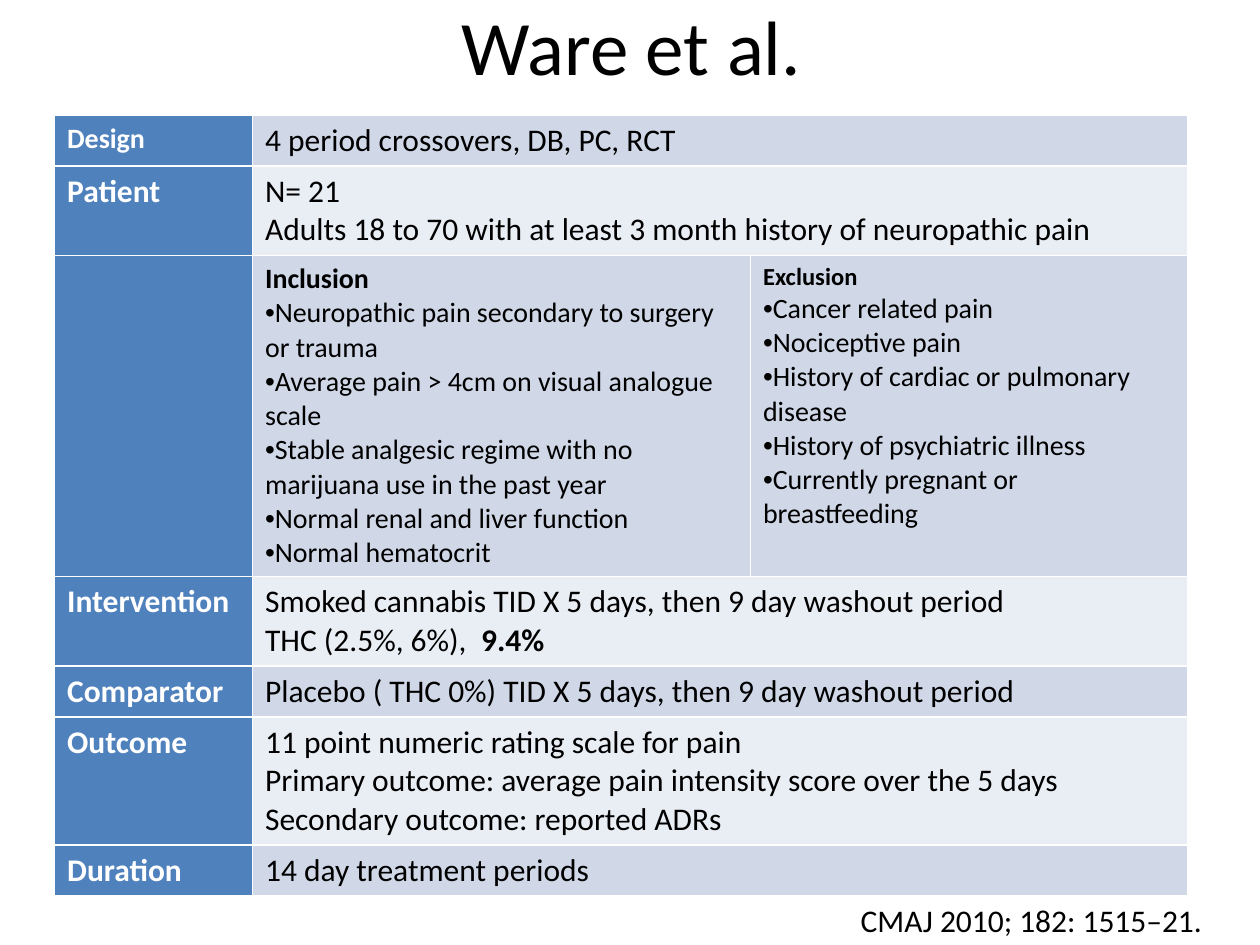
"""Build a one-slide summary table of a crossover trial."""
from dataclasses import dataclass

from lxml.etree import SubElement
from pptx import Presentation
from pptx.dml.color import RGBColor
from pptx.enum.text import MSO_ANCHOR, MSO_AUTO_SIZE, PP_ALIGN
from pptx.oxml.ns import qn
from pptx.util import Cm, Pt

BLACK = RGBColor(0x00, 0x00, 0x00)
WHITE = RGBColor(0xFF, 0xFF, 0xFF)
BLUE = RGBColor(0x4F, 0x81, 0xBD)
BANDS = (RGBColor(0xD0, 0xD8, 0xE8), RGBColor(0xE9, 0xED, 0xF4))


@dataclass
class Line:
    text: str
    size: int = 18
    bold: bool = False
    bullet: bool = False
    bold_ending: str = ""


def criteria(heading, heading_size, items):
    return [Line(heading, heading_size, bold=True)] + [
        Line(item, 16, bullet=True) for item in items
    ]


INCLUSION = criteria("Inclusion", 16, [
    "Neuropathic pain secondary to surgery or trauma",
    "Average pain > 4cm on visual analogue scale",
    "Stable analgesic regime with no marijuana use in the past year",
    "Normal renal and liver function",
    "Normal hematocrit",
])
EXCLUSION = criteria("Exclusion", 14, [
    "Cancer related pain",
    "Nociceptive pain",
    "History of cardiac or pulmonary disease",
    "History of psychiatric illness",
    "Currently pregnant or breastfeeding",
])
COLUMN_WIDTHS = (3.99, 10.04, 8.82)
ROWS = [
    (1, Line("Design", 16, True), [[Line("4 period crossovers, DB, PC, RCT")]]),
    (1.8, Line("Patient", bold=True), [[
        Line("N= 21"),
        Line("Adults 18 to 70 with at least 3 month history of neuropathic pain"),
    ]]),
    (6.44, None, [INCLUSION, EXCLUSION]),
    (1.8, Line("Intervention", bold=True), [[
        Line("Smoked cannabis TID X 5 days, then 9 day washout period"),
        Line("THC (2.5%, 6%),  ", bold_ending="9.4%"),
    ]]),
    (1.02, Line("Comparator", bold=True), [[
        Line("Placebo ( THC 0%) TID X 5 days, then 9 day washout period"),
    ]]),
    (2.58, Line("Outcome", bold=True), [[
        Line("11 point numeric rating scale for pain"),
        Line("Primary outcome: average pain intensity score over the 5 days"),
        Line("Secondary outcome: reported ADRs"),
    ]]),
    (1.02, Line("Duration", bold=True), [[Line("14 day treatment periods")]]),
]


class SlideBuilder:
    def __init__(self, presentation, font_name="Calibri"):
        self.font_name = font_name
        self.slide = presentation.slides.add_slide(presentation.slide_layouts[5])

    def add_run(self, paragraph, text, size, bold=False, color=BLACK):
        run = paragraph.add_run()
        run.text = text
        font_format = {"name": self.font_name, "size": Pt(size), "bold": bold}
        for attribute, value in font_format.items():
            setattr(run.font, attribute, value)
        run.font.color.rgb = color

    def add_lines(self, text_frame, lines, color=BLACK):
        for index, line in enumerate(lines):
            paragraph = text_frame.add_paragraph() if index else text_frame.paragraphs[0]
            if line.bullet:
                properties = paragraph._p.get_or_add_pPr()
                SubElement(properties, qn("a:buFont"), typeface="Arial")
                SubElement(properties, qn("a:buChar"), char="•")
            self.add_run(paragraph, line.text, line.size, line.bold, color)
            if line.bold_ending:
                self.add_run(paragraph, line.bold_ending, line.size, True, color)

    def title(self, text, left, top, width, height):
        title = self.slide.shapes.title
        position = {"left": left, "top": top, "width": width, "height": height}
        for attribute, value in position.items():
            setattr(title, attribute, Cm(value))
        title.text_frame.vertical_anchor = MSO_ANCHOR.MIDDLE
        title.text_frame.paragraphs[0].alignment = PP_ALIGN.CENTER
        self.add_lines(title.text_frame, [Line(text, 44)])

    def text_box(self, line, left, top, width, height):
        box = self.slide.shapes.add_textbox(Cm(left), Cm(top), Cm(width), Cm(height))
        frame_format = {"word_wrap": False, "auto_size": MSO_AUTO_SIZE.SHAPE_TO_FIT_TEXT}
        for attribute, value in frame_format.items():
            setattr(box.text_frame, attribute, value)
        self.add_lines(box.text_frame, [line])

    def style_cell(self, cell, color):
        properties = cell._tc.get_or_add_tcPr()
        for side in ("lnL", "lnR", "lnT", "lnB"):
            border = SubElement(properties, qn(f"a:{side}"), w=str(Pt(1)))
            fill = SubElement(border, qn("a:solidFill"))
            SubElement(fill, qn("a:srgbClr"), val=str(WHITE))
        cell.fill.solid()
        cell.fill.fore_color.rgb = color

    def table(self, rows, column_widths, left, top):
        width = sum(column_widths)
        height = sum(row_height for row_height, _, _ in rows)
        table = self.slide.shapes.add_table(
            len(rows), len(column_widths), Cm(left), Cm(top), Cm(width), Cm(height)
        ).table
        for column, column_width in zip(table.columns, column_widths):
            column.width = Cm(column_width)
        for index, (row_height, label, contents) in enumerate(rows):
            table.rows[index].height = Cm(row_height)
            cells = [table.cell(index, column) for column in range(len(column_widths))]
            for cell, color in zip(cells, (BLUE, BANDS[index % 2], BANDS[index % 2])):
                self.style_cell(cell, color)
            if len(contents) == 1:
                cells[1].merge(cells[2])
            if label:
                self.add_lines(cells[0].text_frame, [label], WHITE)
            for cell, lines in zip(cells[1:], contents):
                self.add_lines(cell.text_frame, lines)


def main():
    presentation = Presentation()
    presentation.slide_width = Cm(25.4)
    presentation.slide_height = Cm(19.05)
    builder = SlideBuilder(presentation)
    builder.title("Ware et al.", 1.3, -0.69, 22.86, 3.18)
    builder.table(ROWS, COLUMN_WIDTHS, 1.1, 2.32)
    builder.text_box(Line("CMAJ 2010; 182: 1515–21."), 17.1, 18.03, 7.47, 1.03)
    presentation.save("out.pptx")


if __name__ == "__main__":
    main()
